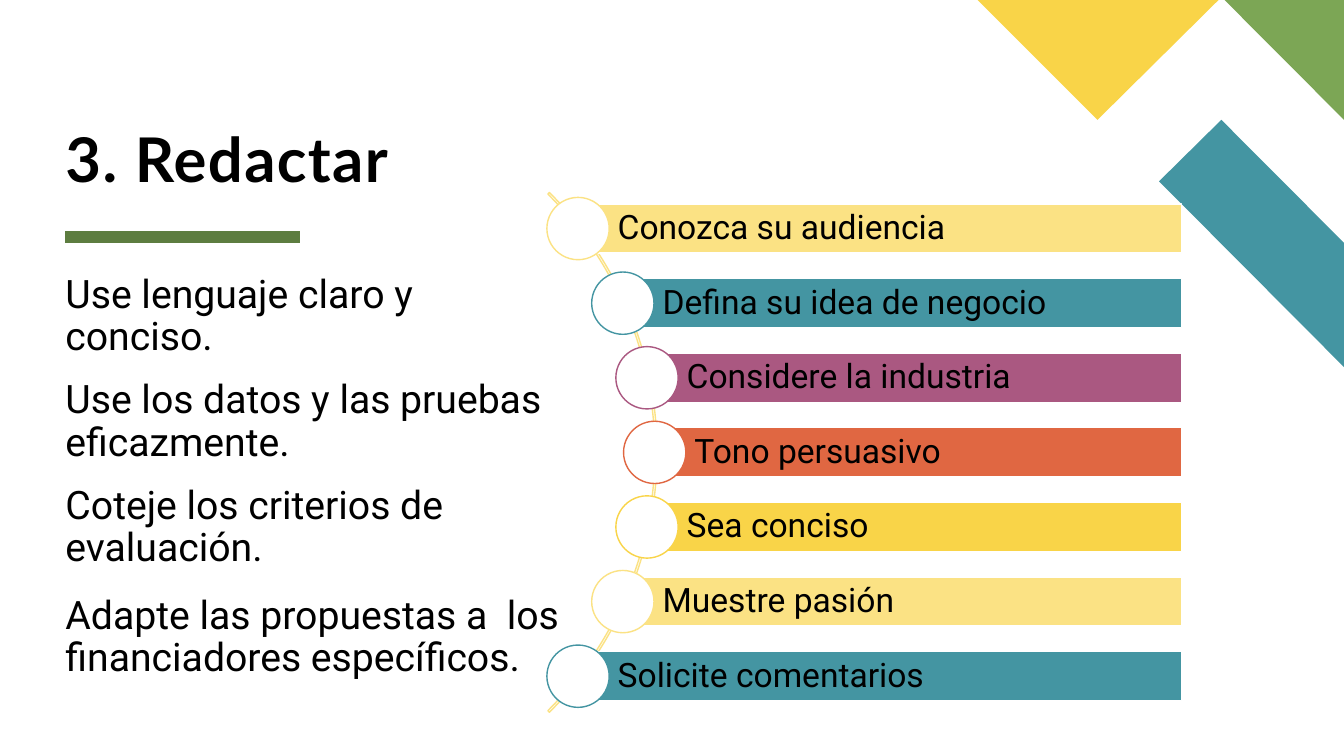
"""Build the slide on drafting a proposal: advice on the left, steps along an arc on the right."""
from math import sqrt

from lxml.etree import SubElement
from pptx import Presentation
from pptx.dml.color import RGBColor as RGB
from pptx.enum.shapes import MSO_CONNECTOR as LINK, MSO_SHAPE as SHAPE
from pptx.enum.text import MSO_ANCHOR as ANCHOR, MSO_AUTO_SIZE as FIT, PP_ALIGN as ALIGN
from pptx.oxml.ns import qn
from pptx.util import Cm, Pt

THEME = {
    "white": RGB.from_string("FFFFFF"),
    "black": RGB.from_string("000000"),
    "teal": RGB.from_string("4495A2"),
    "green": RGB.from_string("7CA655"),
    "moss": RGB.from_string("5D7D40"),
    "gold": RGB.from_string("F9D448"),
    "cream": RGB.from_string("FBE284"),
    "plum": RGB.from_string("AA5881"),
    "rust": RGB.from_string("E06742"),
    "title": {"name": "Lato", "size": Pt(44), "bold": True},
    "body": {"name": "Roboto", "size": Pt(28), "bold": False},
    "step": {"name": "Roboto", "size": Pt(24), "bold": False},
}


def paint(shape, fill, line):
    """Set fill and outline by theme colour, None meaning empty."""
    shape.shadow.inherit = False
    for part, tone in ((shape.fill, fill), (shape.line.fill, line)):
        if tone:
            part.solid()
            part.fore_color.rgb = THEME[tone]
        else:
            part.background()
    if line:
        shape.line.width = Pt(1)


def write(frame, rows, style, space, insets, anchor):
    """Fill a text frame with (text, space before) rows in one theme style."""
    sides = ("margin_left", "margin_top", "margin_right", "margin_bottom")
    form = dict(zip(sides, map(Cm, insets)), word_wrap=True,
                auto_size=FIT.NONE, vertical_anchor=anchor)
    for key, val in form.items():
        setattr(frame, key, val)
    for i, (text, gap) in enumerate(rows):
        para = frame.add_paragraph() if i else frame.paragraphs[0]
        form = {"alignment": ALIGN.LEFT, "line_spacing": space, "space_before": Pt(gap)}
        for key, val in form.items():
            setattr(para, key, val)
        run = para.add_run()
        run.text = text
        for key, val in THEME[style].items():
            setattr(run.font, key, val)
        run.font.color.rgb = THEME["black"]


deck = Presentation()
deck.slide_width, deck.slide_height = Cm(33.87), Cm(19.05)
slide = deck.slides.add_slide(deck.slide_layouts[1])
shapes = slide.shapes
title, body = slide.placeholders

decor = [
    ("teal", [(33.87, 9.25), (33.87, 6.12), (30.78, 3.02), (29.21, 4.57)]),
    ("green", [(33.87, 3.02), (33.87, 0), (30.86, 0)]),
    ("gold", [(24.64, 0), (27.66, 3.02), (30.71, 0)]),
]
for tone, spots in decor:
    first, *rest = [(Cm(x), Cm(y)) for x, y in spots]
    pen = shapes.build_freeform(*first)
    pen.add_line_segments(rest, close=True)
    paint(pen.convert_to_shape(), tone, None)

rule = shapes.add_connector(LINK.STRAIGHT, Cm(1.65), Cm(5.97), Cm(7.57), Cm(5.97))
rule.line.color.rgb = THEME["moss"]
rule.line.width = Pt(8)
SubElement(rule._element.spPr, qn("a:effectLst"))

places = [(title, (1.65, 0.76, 27.15, 4.14)), (body, (1.65, 6.78, 12.47, 10.64))]
for holder, box in places:
    for key, val in zip(("left", "top", "width", "height"), box):
        setattr(holder, key, Cm(val))

write(title.text_frame, [("3. Redactar", 0)], "title", 0.8, (0, 0, 0, 0), ANCHOR.BOTTOM)
title.text_frame.paragraphs[0].runs[0]._r.get_or_add_rPr().set("spc", "100")

advice = [
    ("Use lenguaje claro y conciso.", 0),
    ("Use los datos y las pruebas eficazmente.", 15),
    ("Coteje los criterios de evaluación.", 15),
    ("Adapte las propuestas a  los financiadores específicos.", 18),
]
write(body.text_frame, advice, "body", 0.9, (0, 0.13, 0, 0), ANCHOR.TOP)
for para in body.text_frame.paragraphs:
    props = para._p.get_or_add_pPr()
    for key in ("marL", "indent"):
        props.set(key, "0")
    SubElement(props, qn("a:buNone"))

mid_x, mid_y, reach = 7.3, 11.4, 9.26
arc = shapes.add_shape(SHAPE.BLOCK_ARC, Cm(mid_x - reach), Cm(mid_y - reach),
                       Cm(2 * reach), Cm(2 * reach))
for i, val in enumerate((189, 27, 0.003)):
    arc.adjustments[i] = val
paint(arc, None, "cream")

steps = [
    ("Conozca su audiencia", "cream"),
    ("Defina su idea de negocio", "teal"),
    ("Considere la industria", "plum"),
    ("Tono persuasivo", "rust"),
    ("Sea conciso", "gold"),
    ("Muestre pasión", "cream"),
    ("Solicite comentarios", "teal"),
]
pitch, radius, right, high, dot = 1.88, 9.2, 29.77, 1.24, 1.57
for i, (text, tone) in enumerate(steps):
    drop = (i - len(steps) // 2) * pitch
    x, y = mid_x + sqrt(radius ** 2 - drop ** 2), mid_y + drop
    bar = shapes.add_shape(SHAPE.RECTANGLE, Cm(x), Cm(y - high / 2), Cm(right - x), Cm(high))
    paint(bar, tone, "white")
    write(bar.text_frame, [(text, 0)], "step", 0.9, (1, 0.18, 0.18, 0.18), ANCHOR.MIDDLE)
    ring = shapes.add_shape(SHAPE.OVAL, Cm(x - dot / 2), Cm(y - dot / 2), Cm(dot), Cm(dot))
    paint(ring, "white", tone)

deck.save("out.pptx")
